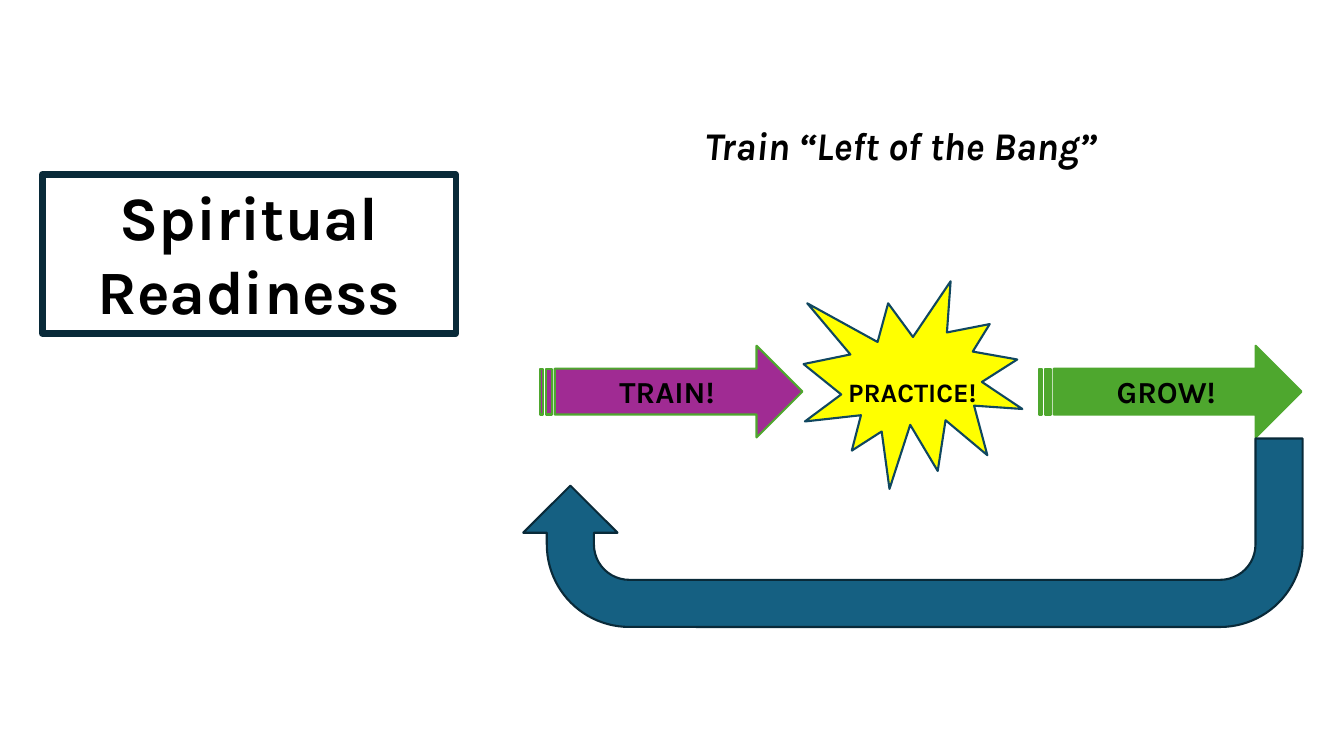
from pptx import Presentation
from pptx.dml.color import RGBColor
from pptx.enum.shapes import MSO_SHAPE
from pptx.enum.text import MSO_ANCHOR, MSO_AUTO_SIZE, PP_ALIGN
from pptx.util import Inches, Pt

STRIPED_ARROW = MSO_SHAPE.STRIPED_RIGHT_ARROW
BURST = MSO_SHAPE.EXPLOSION1
U_TURN = MSO_SHAPE.U_TURN_ARROW
RECTANGLE = MSO_SHAPE.RECTANGLE
LEFT, CENTER = PP_ALIGN.LEFT, PP_ALIGN.CENTER
TOP, MIDDLE = MSO_ANCHOR.TOP, MSO_ANCHOR.MIDDLE
GROW = MSO_AUTO_SIZE.SHAPE_TO_FIT_TEXT

WIDTH, HEIGHT = 13.33, 7.5
COLORS = {
    "ink": "000000",
    "purple": "A02B93",
    "green": "4EA72E",
    "yellow": "FFFF00",
    "blue": "156082",
    "burst_edge": "104760",
    "navy": "092A39",
}


class ReadinessPage:
    font = "Karla"

    def __init__(self, deck):
        self.deck = deck
        self.page = deck.slides.add_slide(deck.slide_layouts[6])

    def place(self, left, top, width, height):
        """Turn percentages of the slide's size into lengths."""
        across, down = self.deck.slide_width / 100, self.deck.slide_height / 100
        return (round(left * across), round(top * down),
                round(width * across), round(height * down))

    def shape(self, kind, area, fill, line, weight=1.5):
        shape = self.page.shapes.add_shape(kind, *self.place(*area))
        shape.shadow.inherit = False
        if fill:
            shape.fill.solid()
            shape.fill.fore_color.rgb = RGBColor.from_string(COLORS[fill])
        else:
            shape.fill.background()
        shape.line.color.rgb = RGBColor.from_string(COLORS[line])
        shape.line.width = Pt(weight)
        return shape

    def set_text(self, box, text, size, align=CENTER, anchor=TOP, after=0, italic=False):
        frame = box.text_frame
        frame.text = text
        frame.word_wrap = True
        frame.vertical_anchor = anchor
        if anchor == TOP:
            frame.auto_size = GROW
        para = frame.paragraphs[0]
        para.alignment = align
        para.space_after = Pt(after)
        font = para.runs[0].font
        font.name, font.size = self.font, Pt(size)
        font.bold, font.italic = True, italic
        font.color.rgb = RGBColor.from_string(COLORS["ink"])

    def label(self, text, area, size, **style):
        box = self.page.shapes.add_textbox(*self.place(*area))
        self.set_text(box, text, size, **style)

    def step_arrow(self, text, left, fill):
        arrow = self.shape(STRIPED_ARROW, (left, 45.73, 19.5, 12.13), fill, "green")
        self.set_text(arrow, text, 21.8, anchor=MIDDLE, after=6)

    def return_arrow(self, area):
        self.shape(U_TURN, area, "blue", "navy").rotation = 180

    def title(self, text, area):
        frame = self.shape(RECTANGLE, area, None, "navy", 4.5)
        self.set_text(frame, text, 44)


def main():
    deck = Presentation()
    deck.slide_width, deck.slide_height = Inches(WIDTH), Inches(HEIGHT)
    page = ReadinessPage(deck)
    page.step_arrow("TRAIN!", 40.21, "purple")
    page.shape(BURST, (59.79, 37.2, 16.28, 27.47), "yellow", "burst_edge")
    page.label("PRACTICE!", (61.59, 49.07, 12.6, 5.6), 19, after=6)
    page.step_arrow("GROW!", 77.34, "green")
    page.return_arrow((38.93, 58, 57.99, 24.93))
    page.label("Train “Left of the Bang”", (51.69, 15.33, 35.48, 7.6), 28,
               align=LEFT, italic=True)
    page.title("Spiritual Readiness", (3.15, 23.07, 30.76, 21.07))
    deck.save("out.pptx")


if __name__ == "__main__":
    main()
